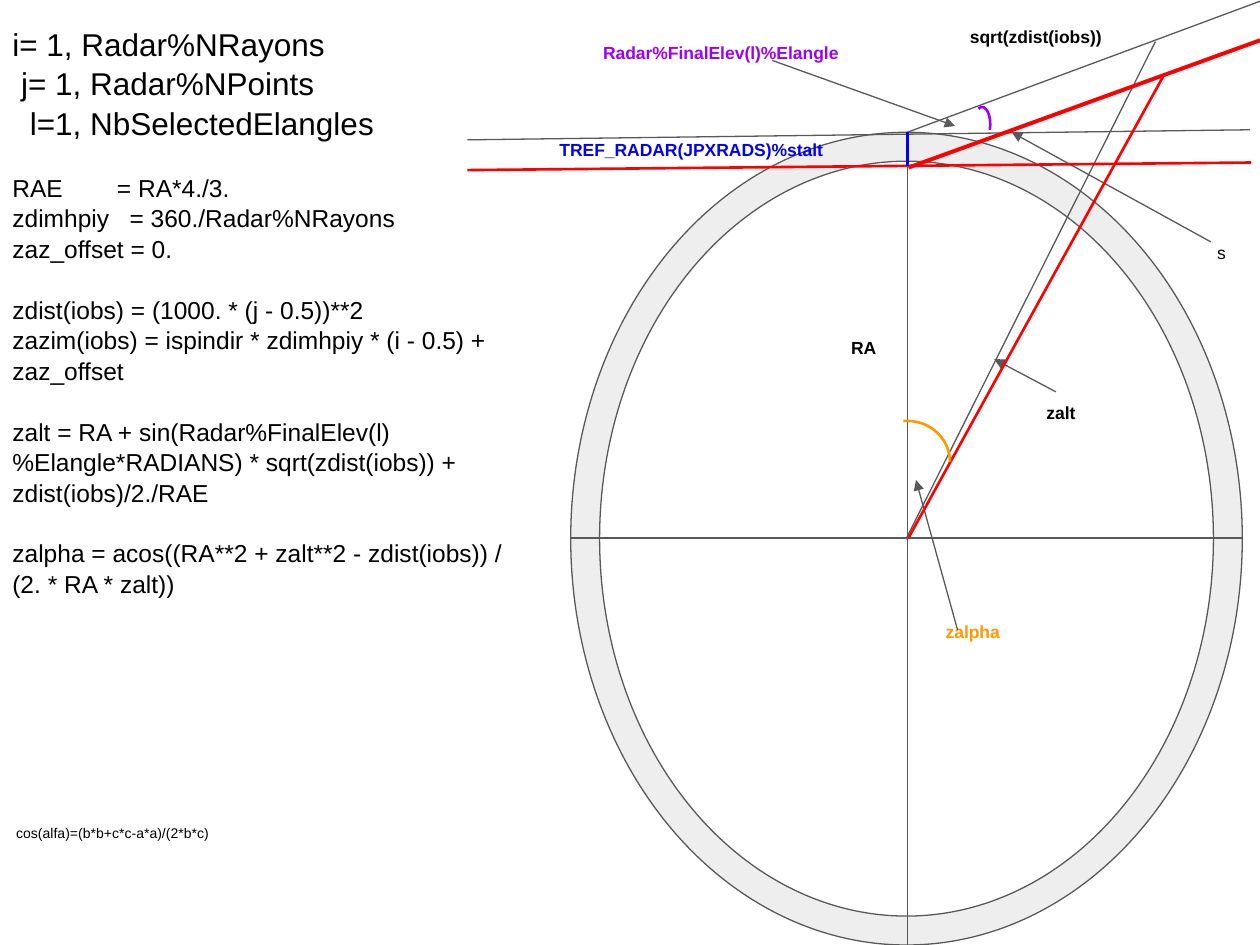
from dataclasses import dataclass

import pptx
import pptx.dml.color
import pptx.enum.shapes
import pptx.enum.text
import pptx.oxml
import pptx.oxml.ns
import pptx.util
from pptx.util import Inches

SHAPE = pptx.enum.shapes.MSO_SHAPE
ALIGN = pptx.enum.text.PP_ALIGN
ANCHOR = pptx.enum.text.MSO_ANCHOR


@dataclass(frozen=True)
class Theme:
    font: str = "Arial"
    black: str = "000000"
    gray: str = "595959"
    ring: str = "EEEEEE"
    red: str = "FF0000"
    blue: str = "0000FF"
    purple: str = "9900FF"
    orange: str = "FF9900"
    loops: float = 18
    formulas: float = 14
    label: float = 10
    footnote: float = 8
    thin: float = 0.75
    medium: float = 1.5
    thick: float = 2.25
    block_gap: float = 16.8
    line_spacing: float = 1.05


THEME = Theme()


def rgb(color):
    return pptx.dml.color.RGBColor.from_string(color)


def add_xml(parent, tag, **attributes):
    child = pptx.oxml.parse_xml(f"<a:{tag} {pptx.oxml.ns.nsdecls('a')}/>")
    for key, value in attributes.items():
        child.set(key, str(value))
    parent.append(child)
    return child


def style_line(line, color, width):
    line.color.rgb = rgb(color)
    line.width = pptx.util.Pt(width)


def write(paragraph, text, size=THEME.label, color=THEME.black, bold=False,
          align=ALIGN.LEFT, before=0, spacing=None, tab=None):
    if tab:
        stops = add_xml(paragraph._p.get_or_add_pPr(), "tabLst")
        add_xml(stops, "tab", pos=Inches(tab), algn="l")
    paragraph.alignment = align
    paragraph.space_before = pptx.util.Pt(before)
    if spacing:
        paragraph.line_spacing = spacing
    run = paragraph.add_run()
    run.text = text
    run.font.name = THEME.font
    run.font.size = pptx.util.Pt(size)
    run.font.bold = bold
    run.font.color.rgb = rgb(color)


def add_frame(slide, box, anchor=ANCHOR.TOP):
    frame = slide.shapes.add_textbox(*map(Inches, box)).text_frame
    frame.word_wrap = True
    frame.vertical_anchor = anchor
    frame.margin_left = frame.margin_right = Inches(0.1)
    frame.margin_top = frame.margin_bottom = Inches(0.1)
    return frame


def add_label(slide, text, box, color=THEME.black, bold=True):
    frame = add_frame(slide, box, ANCHOR.MIDDLE)
    write(frame.paragraphs[0], text, color=color, bold=bold, align=ALIGN.CENTER)


def add_line(slide, start, end, color=THEME.gray, width=THEME.thin, arrow=False):
    line = slide.shapes.add_connector(
        pptx.enum.shapes.MSO_CONNECTOR.STRAIGHT, *map(Inches, start + end))
    style_line(line.line, color, width)
    if arrow:
        add_xml(line.line._get_or_add_ln(), "tailEnd", type="triangle")
    add_xml(line._element.spPr, "effectLst")


def add_outline(slide, preset, box, adjustments, color, width, fill=None):
    shape = slide.shapes.add_shape(preset, *map(Inches, box))
    shape.shadow.inherit = False
    for index, value in enumerate(adjustments):
        shape.adjustments[index] = value
    if fill:
        shape.fill.solid()
        shape.fill.fore_color.rgb = rgb(fill)
    else:
        shape.fill.background()
    style_line(shape.line, color, width)


def add_algorithm(slide):
    loops = ["i= 1, Radar%NRayons", " j= 1, Radar%NPoints",
             "  l=1, NbSelectedElangles"]
    formula_blocks = [
        [("RAE\t= RA*4./3.", 0.83),
         ("zdimhpiy\t= 360./Radar%NRayons", 0.93),
         ("zaz_offset = 0.", None)],
        [("zdist(iobs) = (1000. * (j - 0.5))**2", None),
         ("zazim(iobs) = ispindir * zdimhpiy * (i - 0.5) + zaz_offset", None)],
        [("zalt = RA + sin(Radar%FinalElev(l)%Elangle*RADIANS) * "
          "sqrt(zdist(iobs)) + zdist(iobs)/2./RAE", None)],
        [("zalpha = acos((RA**2 + zalt**2 - zdist(iobs)) / "
          "(2. * RA * zalt))", None)],
    ]
    frame = add_frame(slide, (0, 0.08, 4.17, 5.8))
    for index, loop in enumerate(loops):
        paragraph = frame.add_paragraph() if index else frame.paragraphs[0]
        write(paragraph, loop, size=THEME.loops, spacing=THEME.line_spacing)
    for block in formula_blocks:
        for index, (formula, tab) in enumerate(block):
            write(frame.add_paragraph(), formula, size=THEME.formulas, tab=tab,
                  before=0 if index else THEME.block_gap,
                  spacing=THEME.line_spacing)


def add_earth(slide):
    left, top, width, height = 4.53, 1.05, 5.33, 6.45
    add_outline(slide, SHAPE.DONUT, (left, top, width, height), [0.043],
                THEME.gray, THEME.thin, fill=THEME.ring)
    add_line(slide, (left, 4.27), (left + width, 4.27))
    add_line(slide, (7.2, top + height), (7.2, top))


def add_labels(slide):
    add_label(slide, "RA", (6.62, 2.57, 0.47, 0.37))
    add_label(slide, "TREF_RADAR(JPXRADS)%stalt", (4.31, 1.03, 2.35, 0.32),
              color=THEME.blue)
    add_label(slide, "zalpha", (7.38, 4.83, 0.68, 0.37), color=THEME.orange)
    add_label(slide, "sqrt(zdist(iobs))", (7.43, 0.13, 1.58, 0.32))
    add_label(slide, "Radar%FinalElev(l)%Elangle", (4.17, 0.09, 3.1, 0.65),
              color=THEME.purple)
    add_label(slide, "s", (9.53, 1.79, 0.33, 0.42), bold=False)
    add_label(slide, "zalt", (8.16, 3.11, 0.52, 0.32))


def add_rays(slide):
    add_line(slide, (7.2, 1.05), (10, 0.01))
    add_line(slide, (7.19, 4.28), (9.17, 0.33))
    add_line(slide, (3.71, 1.11), (9.92, 1.03))
    pointers = [((7.6, 5), (7.27, 3.81)), ((6.13, 0.48), (7.58, 1)),
                ((9.61, 1.92), (8.03, 1.05)), ((8.38, 3.11), (7.89, 2.85))]
    for start, end in pointers:
        add_line(slide, start, end, arrow=True)
    add_line(slide, (7.21, 1.33), (10, 0.32), THEME.red, THEME.thick)
    add_line(slide, (3.71, 1.35), (9.93, 1.29), THEME.red, THEME.medium)
    add_line(slide, (7.21, 4.27), (9.23, 0.61), THEME.red, THEME.medium)
    add_line(slide, (7.2, 1.32), (7.2, 1.05), THEME.blue, THEME.medium)


def add_angles(slide):
    add_outline(slide, SHAPE.ARC, (7.73, 0.85, 0.13, 0.27), [153.94, 22.18],
                THEME.purple, THEME.medium)
    add_outline(slide, SHAPE.ARC, (6.86, 3.34, 0.68, 0.65), [158.88, 0],
                THEME.orange, THEME.medium)


def main():
    presentation = pptx.Presentation()
    presentation.slide_width = Inches(10)
    presentation.slide_height = Inches(7.5)
    slide = presentation.slides.add_slide(presentation.slide_layouts[6])
    add_earth(slide)
    add_labels(slide)
    add_algorithm(slide)
    add_rays(slide)
    add_angles(slide)
    footnote = add_frame(slide, (0.03, 6.48, 4.36, 0.65))
    write(footnote.paragraphs[0], "cos(alfa)=(b*b+c*c-a*a)/(2*b*c)",
          size=THEME.footnote)
    presentation.save("out.pptx")


if __name__ == "__main__":
    main()
